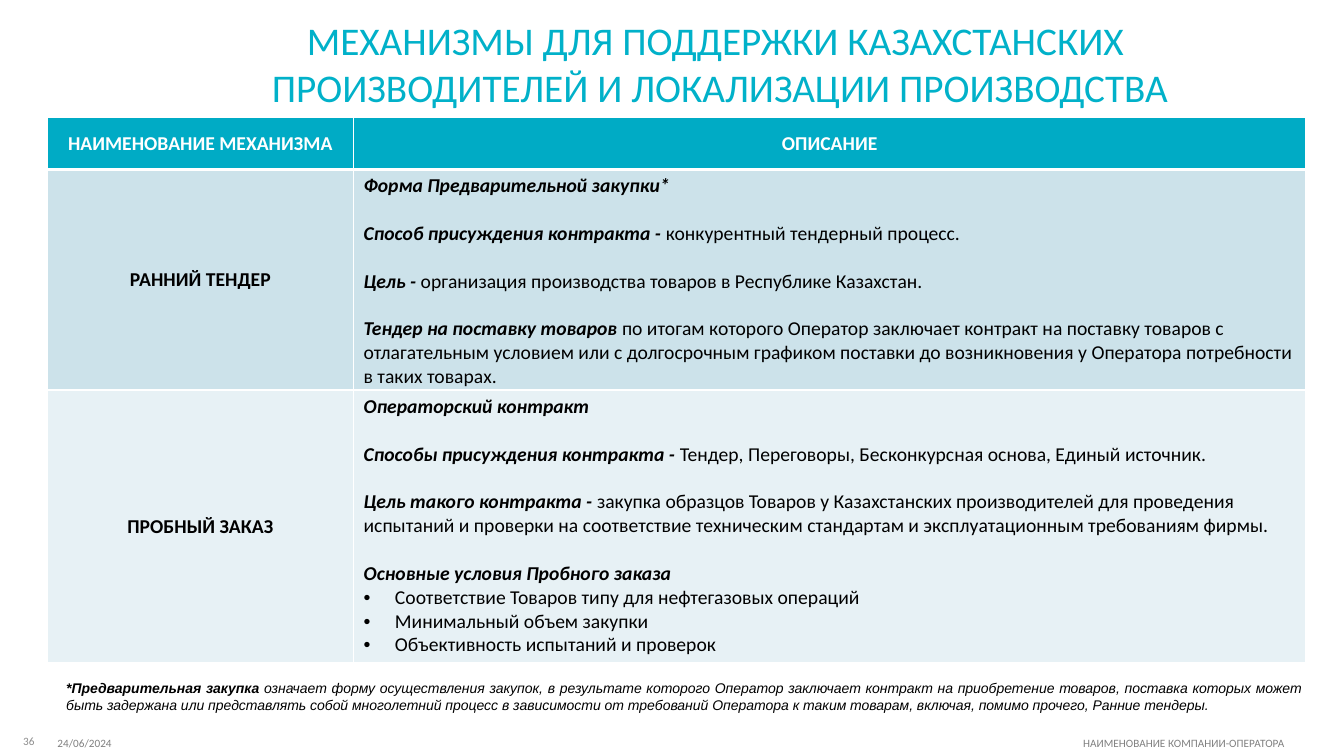
import pptx
import pptx.dml.color
import pptx.enum.text
import pptx.oxml
import pptx.oxml.ns
import pptx.util
from pptx.util import Cm, Pt

ALIGN = pptx.enum.text.PP_ALIGN
MIDDLE = pptx.enum.text.MSO_ANCHOR.MIDDLE
NAMESPACE = pptx.oxml.ns.nsdecls("a")


def color(value):
    return pptx.dml.color.RGBColor.from_string(value)


def style(paragraph, size, fill, align=ALIGN.LEFT, name="Calibri", bold=None):
    paragraph.alignment = align
    paragraph.font.name = name
    paragraph.font.size = Pt(size)
    paragraph.font.bold = bold
    paragraph.font.color.rgb = color(fill)


deck = pptx.Presentation()
deck.slide_width, deck.slide_height = Cm(33.87), Cm(19.05)
slide = deck.slides.add_slide(deck.slide_layouts[5])

# Title
title = slide.shapes.title
title.left, title.top, title.width, title.height = Cm(2.41), Cm(0.25), Cm(31.45), Cm(2.7)
title.text_frame.text = ("МЕХАНИЗМЫ ДЛЯ ПОДДЕРЖКИ КАЗАХСТАНСКИХ \n"
                         "ПРОИЗВОДИТЕЛЕЙ И ЛОКАЛИЗАЦИИ ПРОИЗВОДСТВА")
title.text_frame.vertical_anchor = MIDDLE
title.text_frame.auto_size = pptx.enum.text.MSO_AUTO_SIZE.NONE
for line in title.text_frame.paragraphs:
    style(line, 28, "01B1C9", ALIGN.CENTER)

# Mechanisms: name, row fill, (bold lead, plain text) paragraphs, bullets
mechanisms = [
    ("РАННИЙ ТЕНДЕР", "CCE2EA", [
        ("Форма Предварительной закупки*", ""),
        ("Способ присуждения контракта - ", "конкурентный тендерный процесс."),
        ("Цель - ", "организация производства товаров в Республике Казахстан."),
        ("Тендер на поставку товаров",
         " по итогам которого Оператор заключает контракт на поставку товаров с "
         "отлагательным условием или с долгосрочным графиком поставки до возникновения "
         "у Оператора потребности в таких товарах."),
    ], []),
    ("ПРОБНЫЙ ЗАКАЗ", "E7F1F5", [
        ("Операторский контракт", ""),
        ("Способы присуждения контракта - ",
         "Тендер, Переговоры, Бесконкурсная основа, Единый источник."),
        ("Цель такого контракта - ",
         "закупка образцов Товаров у Казахстанских производителей для проведения "
         "испытаний и проверки на соответствие техническим стандартам и "
         "эксплуатационным требованиям фирмы."),
        ("Основные условия Пробного заказа", ""),
    ], [
        "Соответствие Товаров типу для нефтегазовых операций",
        "Минимальный объем закупки",
        "Объективность испытаний и проверок",
    ]),
]

# Table grid
table = slide.shapes.add_table(3, 2, Cm(1.19), Cm(2.95), Cm(31.72), Cm(13.75)).table
for column, width in zip(table.columns, (7.72, 24)):
    column.width = Cm(width)
for row, height in zip(table.rows, (1.32, 5.56, 6.87)):
    row.height = Cm(height)

# Header row
for cell, heading in zip(table.rows[0].cells, ("НАИМЕНОВАНИЕ МЕХАНИЗМА", "ОПИСАНИЕ")):
    cell.text = heading
    cell.vertical_anchor = MIDDLE
    style(cell.text_frame.paragraphs[0], 14, "FFFFFF", ALIGN.CENTER, bold=True)

# Mechanism rows
for row_index, (mechanism, _, statements, conditions) in enumerate(mechanisms, 1):
    name_cell, description = table.rows[row_index].cells
    name_cell.text = mechanism
    name_cell.vertical_anchor = MIDDLE
    style(name_cell.text_frame.paragraphs[0], 14, "000000", ALIGN.CENTER, bold=True)

    description.margin_top, description.margin_bottom = Cm(0.12), Cm(0)
    body = description.text_frame
    for index, (lead, detail) in enumerate(statements):
        statement = body.add_paragraph() if index else body.paragraphs[0]
        if index:
            statement.space_before = Pt(17)
        style(statement, 14, "000000")
        lead_run = statement.add_run()
        lead_run.text = lead
        lead_run.font.bold = lead_run.font.italic = True
        if detail:
            statement.add_run().text = detail
    for condition in conditions:
        bullet = body.add_paragraph()
        bullet.text = condition
        properties = bullet._p.get_or_add_pPr()
        properties.set("marL", str(Cm(0.79)))
        properties.set("indent", str(-Cm(0.79)))
        for tag in ('buFont %s typeface="Arial"', 'buChar %s char="•"'):
            properties.append(pptx.oxml.parse_xml(f"<a:{tag % NAMESPACE}/>"))
        style(bullet, 14, "000000")

# Cell fills and white borders, thicker under the header
fills = ["00ABC5"] + [mechanism[1] for mechanism in mechanisms]
for row_index, fill in enumerate(fills):
    for cell in table.rows[row_index].cells:
        properties = cell._tc.get_or_add_tcPr()
        for side in "LRTB":
            thick = (row_index, side) in ((0, "B"), (1, "T"))
            properties.append(pptx.oxml.parse_xml(
                f'<a:ln{side} {NAMESPACE} w="{Pt(3 if thick else 1)}"><a:solidFill>'
                f'<a:srgbClr val="FFFFFF"/></a:solidFill></a:ln{side}>'))
        cell.fill.solid()
        cell.fill.fore_color.rgb = color(fill)

# Footnote
footnote = slide.shapes.add_textbox(Cm(1.42), Cm(16.99), Cm(31.62), Cm(1.12)).text_frame
footnote.word_wrap = True
definition = footnote.paragraphs[0]
style(definition, 10, "000000", ALIGN.JUSTIFY, "Arial")
definition.font.italic = True
term = definition.add_run()
term.text = "*Предварительная закупка "
term.font.bold = True
definition.add_run().text = (
    "означает форму осуществления закупок, в результате которого Оператор заключает "
    "контракт на приобретение товаров, поставка которых может быть задержана или "
    "представлять собой многолетний процесс в зависимости от требований Оператора к "
    "таким товарам, включая, помимо прочего, Ранние тендеры.")

# Footer: page number, date, company
for text, left, top, width, fill, align in (
        ("36", 0.28, 18.38, 0.9, "8C8C8C", ALIGN.CENTER),
        ("24/06/2024", 1.2, 18.43, 4, "808080", ALIGN.LEFT),
        ("НАИМЕНОВАНИЕ КОМПАНИИ-ОПЕРАТОРА", 22.88, 18.43, 9.75, "808080", ALIGN.RIGHT)):
    footer = slide.shapes.add_textbox(Cm(left), Cm(top), Cm(width), Cm(0.6)).text_frame
    footer.word_wrap = True
    footer.margin_left = footer.margin_right = Cm(0 if text == "36" else 0.25)
    footer.text = text
    style(footer.paragraphs[0], 8, fill, align)

deck.save("out.pptx")
